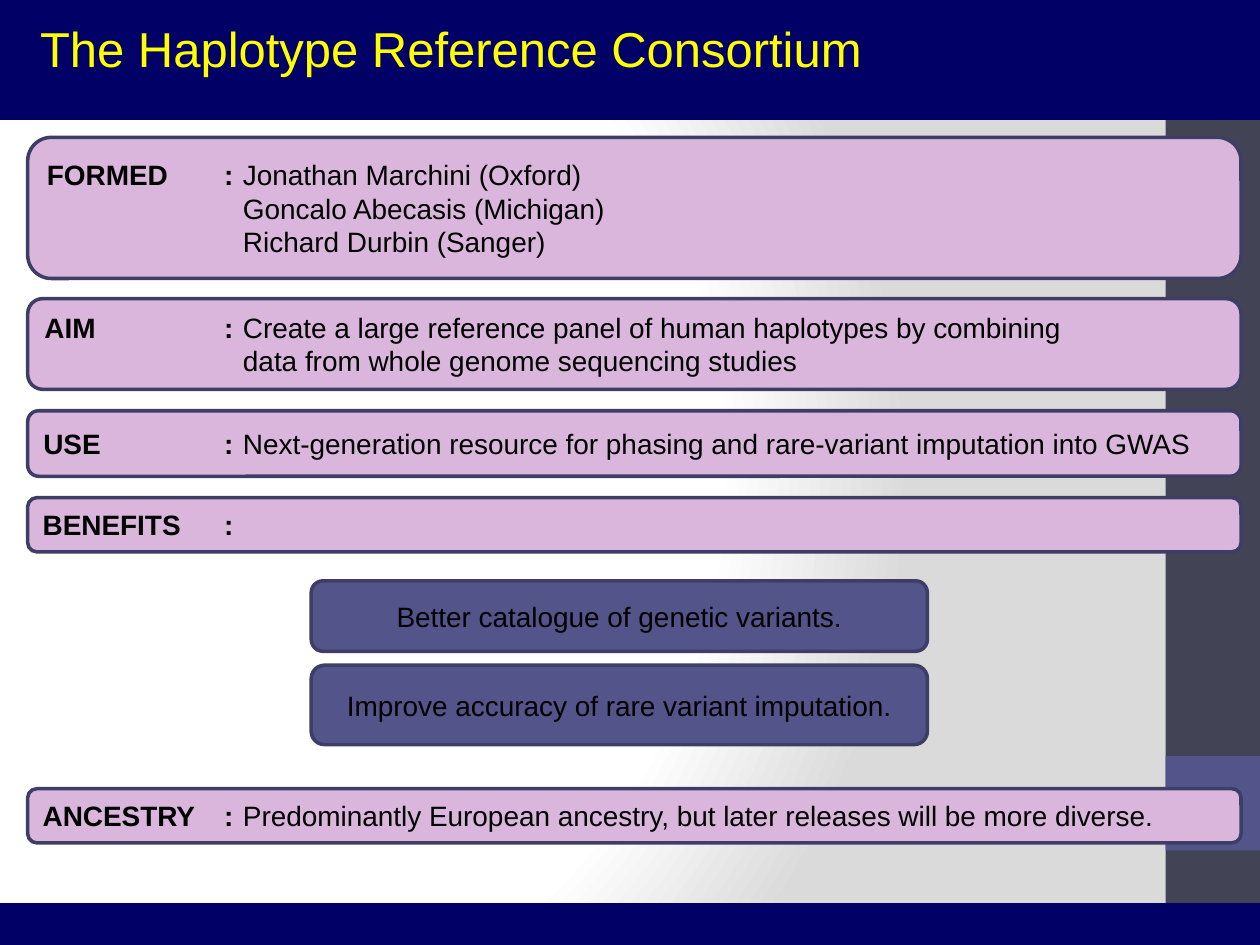
from dataclasses import dataclass

from pptx import Presentation
from pptx.dml.color import RGBColor
from pptx.enum.shapes import MSO_SHAPE as Preset
from pptx.enum.text import MSO_ANCHOR as Anchor, MSO_AUTO_SIZE as AutoSize, PP_ALIGN as Align
from pptx.oxml import parse_xml
from pptx.oxml.ns import nsdecls
from pptx.util import Inches, Pt


@dataclass(frozen=True)
class Theme:
    font: str = "Arial"
    title_size: int = 28
    body_size: int = 16
    border: int = 2
    navy: str = "010066"
    slate: str = "424456"
    indigo: str = "53548A"
    outline: str = "3D3E66"
    lilac: str = "DBB6DC"
    yellow: str = "FFFF00"
    black: str = "000000"
    white: str = "FFFFFF"
    grey: str = "DADADA"


THEME = Theme()
COLON_X, VALUE_X = 1.78, 1.93   # columns shared by all fact panels
INSET = 0.1
CORNER = 0.16667                # corner radius as a share of panel height
CORNER_INSET = 0.29             # share of the radius that text keeps clear

ROW_LEFT, ROW_WIDTH = 0.22, 9.63
FACTS = [  # top, height, label, value lines
    (1.09, 1.12, "FORMED", ["Jonathan Marchini (Oxford)",
                            "Goncalo Abecasis (Michigan)",
                            "Richard Durbin (Sanger)"]),
    (2.37, 0.72, "AIM", ["Create a large reference panel of human haplotypes by combining",
                         "data from whole genome sequencing studies"]),
    (3.26, 0.52, "USE", ["Next-generation resource for phasing and rare-variant "
                         "imputation into GWAS"]),
    (3.95, 0.43, "BENEFITS", []),
    (6.26, 0.43, "ANCESTRY", ["Predominantly European ancestry, but later releases "
                              "will be more diverse."]),
]
BENEFITS = [  # top, height, text
    (4.61, 0.56, "Better catalogue of genetic variants."),
    (5.28, 0.63, "Improve accuracy of rare variant imputation."),
]


def add_block(slide, box, preset, fill, line=None):
    block = slide.shapes.add_shape(preset, *map(Inches, box))
    block.shadow.inherit = False
    block.fill.solid()
    block.fill.fore_color.rgb = RGBColor.from_string(fill)
    if line:
        block.line.color.rgb = RGBColor.from_string(line)
        block.line.width = Pt(THEME.border)
    else:
        block.line.fill.background()
    return block


def add_run(paragraph, text, size=THEME.body_size, color=THEME.black, bold=False):
    run = paragraph.add_run()
    run.text = text
    run.font.name = THEME.font
    run.font.size = Pt(size)
    run.font.bold = bold
    run.font.color.rgb = RGBColor.from_string(color)


def add_panel(slide, box, fill):
    """Rounded panel; returns its text frame, ready for left-aligned text."""
    panel = add_block(slide, box, Preset.ROUNDED_RECTANGLE, fill, THEME.outline)
    frame = panel.text_frame
    frame.word_wrap = True
    frame.vertical_anchor = Anchor.MIDDLE
    frame.paragraphs[0].alignment = Align.LEFT
    return frame


def add_background(slide):
    stops = "".join(
        f'<a:gs pos="{share * 1000}"><a:srgbClr val="{color}"/></a:gs>'
        for share, color in [(0, THEME.white), (75, THEME.white), (100, THEME.grey)])
    slide.element.cSld.insert(0, parse_xml(
        f'<p:bg {nsdecls("p", "a")}><p:bgPr><a:gradFill rotWithShape="1">'
        f'<a:gsLst>{stops}</a:gsLst><a:path path="circle">'
        '<a:fillToRect l="20000" t="50000" r="100000" b="50000"/></a:path>'
        '</a:gradFill><a:effectLst/></p:bgPr></p:bg>'))


def add_sidebar(slide, box):
    left, top, width, _ = box
    add_block(slide, box, Preset.RECTANGLE, THEME.slate)
    add_block(slide, (left, top + 6, width, width), Preset.RECTANGLE, THEME.indigo)


def add_band(slide, box):
    add_block(slide, box, Preset.RECTANGLE, THEME.navy, THEME.navy)


def add_title(slide, box, text):
    frame = slide.shapes.add_textbox(*map(Inches, box)).text_frame
    frame.word_wrap = False
    frame.auto_size = AutoSize.SHAPE_TO_FIT_TEXT
    add_run(frame.paragraphs[0], text, THEME.title_size, THEME.yellow)


def add_fact(slide, box, label, values):
    left, _, _, height = box
    text_left = left + INSET + CORNER_INSET * CORNER * height
    colon, value = (int(Inches(x - text_left)) for x in (COLON_X, VALUE_X))
    frame = add_panel(slide, box, THEME.lilac)

    # Label, colon and first value stand on tab stops
    first = frame.paragraphs[0]
    first._p.get_or_add_pPr().append(parse_xml(
        f'<a:tabLst {nsdecls("a")}><a:tab pos="{colon}" algn="l"/>'
        f'<a:tab pos="{value}" algn="l"/></a:tabLst>'))
    add_run(first, f"{label}\t:", bold=True)
    if values:
        add_run(first, f"\t{values[0]}")

    # Further values are indented to the value column
    for text in values[1:]:
        line = frame.add_paragraph()
        line.alignment = Align.LEFT
        line._p.get_or_add_pPr().set("marL", str(value))
        add_run(line, text)


def add_benefit(slide, box, text):
    paragraph = add_panel(slide, box, THEME.indigo).paragraphs[0]
    paragraph.alignment = Align.CENTER
    add_run(paragraph, text)


def main():
    deck = Presentation()
    deck.slide_width, deck.slide_height = Inches(10), Inches(7.5)
    slide = deck.slides.add_slide(deck.slide_layouts[6])

    # Backdrop
    add_background(slide)
    add_sidebar(slide, (9.25, 0, 0.75, 7.5))
    for top in (-0.11, 7.18):
        add_band(slide, (-0.05, top, 10.22, 1.05))

    # Content
    add_title(slide, (0.22, 0.1, 6.93, 0.57), "The Haplotype Reference Consortium")
    for top, height, label, values in FACTS:
        add_fact(slide, (ROW_LEFT, top, ROW_WIDTH, height), label, values)
    for top, height, text in BENEFITS:
        add_benefit(slide, (2.47, top, 4.89, height), text)

    deck.save("out.pptx")


if __name__ == "__main__":
    main()
